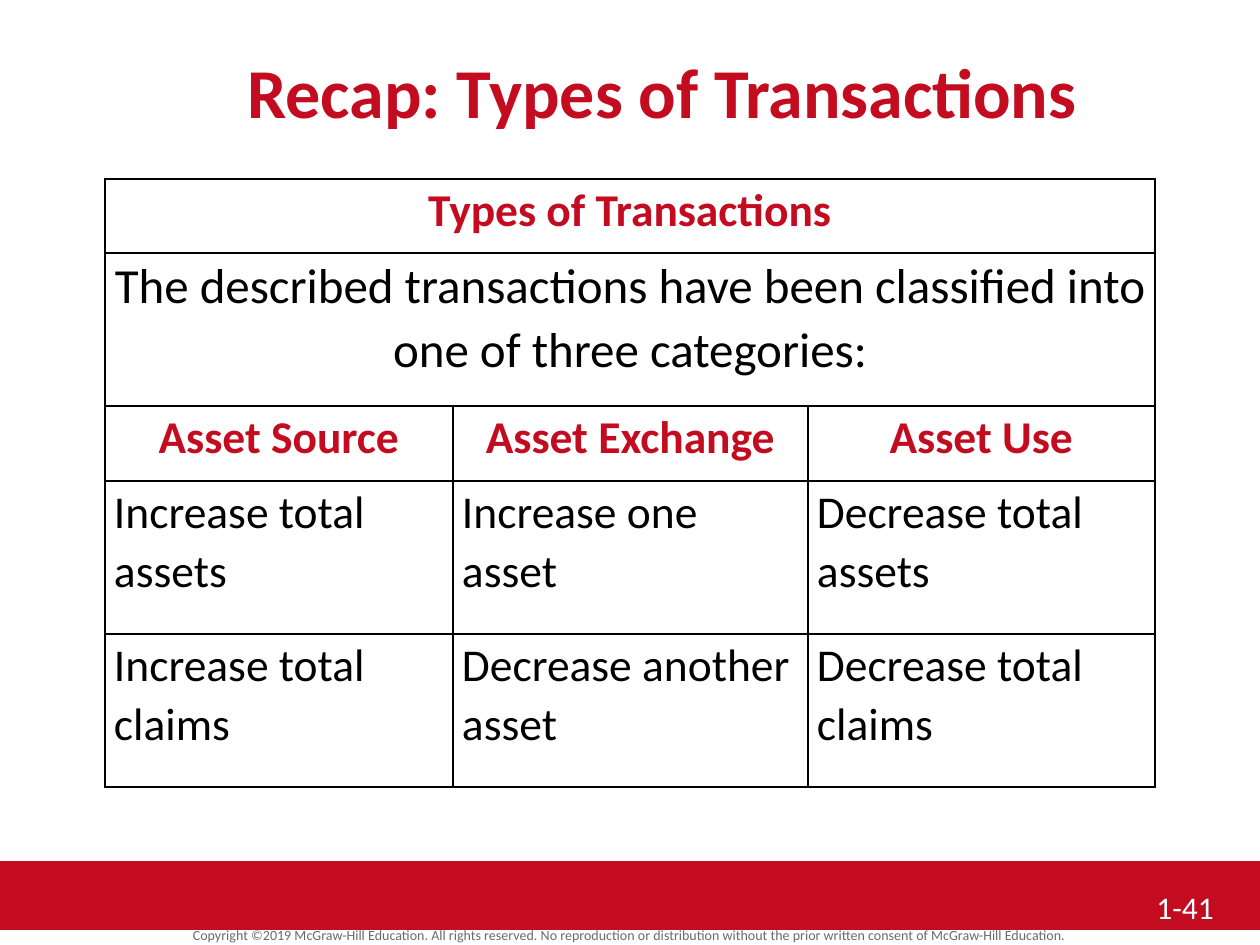
from dataclasses import dataclass

from lxml.etree import SubElement
from pptx import Presentation
from pptx.dml.color import RGBColor
from pptx.enum.shapes import MSO_SHAPE
from pptx.enum.text import MSO_ANCHOR, MSO_AUTO_SIZE, PP_ALIGN
from pptx.oxml.ns import qn
from pptx.slide import Slide
from pptx.table import Table, _Cell
from pptx.text.text import TextFrame
from pptx.util import Emu, Pt

PX_PER_INCH = 126


def px(length: int) -> Emu:
    return Emu(round(length * 914400 / PX_PER_INCH))


@dataclass(frozen=True)
class Theme:
    font: str = "Calibri"
    red: str = "C30C20"
    black: str = "000000"
    white: str = "FFFFFF"
    gray: str = "6A6A6A"
    title_size: int = 40
    lead_size: int = 28
    table_size: int = 26
    page_size: int = 18
    copyright_size: int = 8


@dataclass(frozen=True)
class Style:
    size: int
    color: str
    bold: bool = False
    align: PP_ALIGN = PP_ALIGN.LEFT
    line_spacing: float = 1.0
    space_after: int = 0


@dataclass(frozen=True)
class Box:
    left: int
    top: int
    width: int
    height: int

    def emu(self) -> tuple[Emu, Emu, Emu, Emu]:
        return px(self.left), px(self.top), px(self.width), px(self.height)


@dataclass(frozen=True)
class TableRow:
    height: int
    texts: tuple[str, ...]
    style: Style


THEME = Theme()
HEADING = Style(THEME.table_size, THEME.red, True, PP_ALIGN.CENTER, 1.07, 8)
LEAD = Style(THEME.lead_size, THEME.black, False, PP_ALIGN.CENTER, 1.07, 8)
EFFECT = Style(THEME.table_size, THEME.black, False, PP_ALIGN.LEFT, 1.07, 8)

COLUMN_WIDTHS = (348, 355, 347)
TRANSACTION_ROWS = (
    TableRow(74, ("Types of Transactions",), HEADING),
    TableRow(153, ("The described transactions have been classified into one of three categories:",), LEAD),
    TableRow(75, ("Asset Source", "Asset Exchange", "Asset Use"), HEADING),
    TableRow(153, ("Increase total assets", "Increase one asset", "Decrease total assets"), EFFECT),
    TableRow(153, ("Increase total claims", "Decrease another asset", "Decrease total claims"), EFFECT),
)
COPYRIGHT = (
    "Copyright ©2019 McGraw-Hill Education. All rights reserved. No reproduction or "
    "distribution without the prior written consent of McGraw-Hill Education."
)


def write(frame: TextFrame, text: str, style: Style) -> None:
    frame.text = text
    frame.word_wrap = True
    paragraph = frame.paragraphs[0]
    paragraph.alignment = style.align
    paragraph.line_spacing = style.line_spacing
    paragraph.space_before = Pt(0)
    paragraph.space_after = Pt(style.space_after)
    paragraph.font.name = THEME.font
    paragraph.font.size = Pt(style.size)
    paragraph.font.bold = style.bold
    paragraph.font.color.rgb = RGBColor.from_string(style.color)


def add_title(slide: Slide, box: Box, text: str) -> None:
    title = slide.shapes.title
    title.left, title.top, title.width, title.height = box.emu()
    write(title.text_frame, text, Style(THEME.title_size, THEME.red, True, PP_ALIGN.CENTER))
    title.text_frame.auto_size = MSO_AUTO_SIZE.NONE
    title.text_frame.vertical_anchor = MSO_ANCHOR.TOP


def add_band(slide: Slide, box: Box) -> None:
    band = slide.shapes.add_shape(MSO_SHAPE.RECTANGLE, *box.emu())
    band.shadow.inherit = False
    band.fill.solid()
    band.fill.fore_color.rgb = RGBColor.from_string(THEME.red)
    band.line.fill.background()


def add_label(slide: Slide, box: Box, text: str, style: Style, anchor: MSO_ANCHOR) -> None:
    label = slide.shapes.add_textbox(*box.emu())
    write(label.text_frame, text, style)
    label.text_frame.vertical_anchor = anchor


def set_borders(cell: _Cell) -> None:
    properties = cell._tc.get_or_add_tcPr()
    for position, side in enumerate(("lnL", "lnR", "lnT", "lnB")):
        border = SubElement(properties, qn(f"a:{side}"), w=str(Pt(1)))
        fill = SubElement(border, qn("a:solidFill"))
        SubElement(fill, qn("a:srgbClr"), val=THEME.black)
        properties.insert(position, border)


def fill_row(table: Table, index: int, row: TableRow) -> None:
    table.rows[index].height = px(row.height)
    cells = list(table.rows[index].cells)
    for cell in cells:
        cell.margin_left = cell.margin_right = px(9)
        cell.margin_top = cell.margin_bottom = 0
        cell.fill.background()
        set_borders(cell)
    if len(row.texts) == 1:
        cells[0].merge(cells[-1])
    for cell, text in zip(cells, row.texts):
        write(cell.text_frame, text, row.style)


def add_transactions(slide: Slide, left: int, top: int) -> None:
    box = Box(left, top, sum(COLUMN_WIDTHS), sum(row.height for row in TRANSACTION_ROWS))
    table = slide.shapes.add_table(len(TRANSACTION_ROWS), len(COLUMN_WIDTHS), *box.emu()).table
    table.first_row = table.horz_banding = False
    for column, width in zip(table.columns, COLUMN_WIDTHS):
        column.width = px(width)
    for index, row in enumerate(TRANSACTION_ROWS):
        fill_row(table, index, row)


def main() -> None:
    presentation = Presentation()
    presentation.slide_width = px(1260)
    presentation.slide_height = px(945)
    slide = presentation.slides.add_slide(presentation.slide_layouts[5])
    add_band(slide, Box(0, 861, 1260, 69))
    copyright_style = Style(THEME.copyright_size, THEME.gray, align=PP_ALIGN.CENTER, line_spacing=0.8)
    add_label(slide, Box(0, 925, 1260, 24), COPYRIGHT, copyright_style, MSO_ANCHOR.MIDDLE)
    add_title(slide, Box(95, 42, 1134, 158), "Recap: Types of Transactions")
    add_label(slide, Box(1144, 882, 116, 53), "1-41", Style(THEME.page_size, THEME.white), MSO_ANCHOR.TOP)
    add_transactions(slide, 105, 179)
    presentation.save("out.pptx")


if __name__ == "__main__":
    main()
